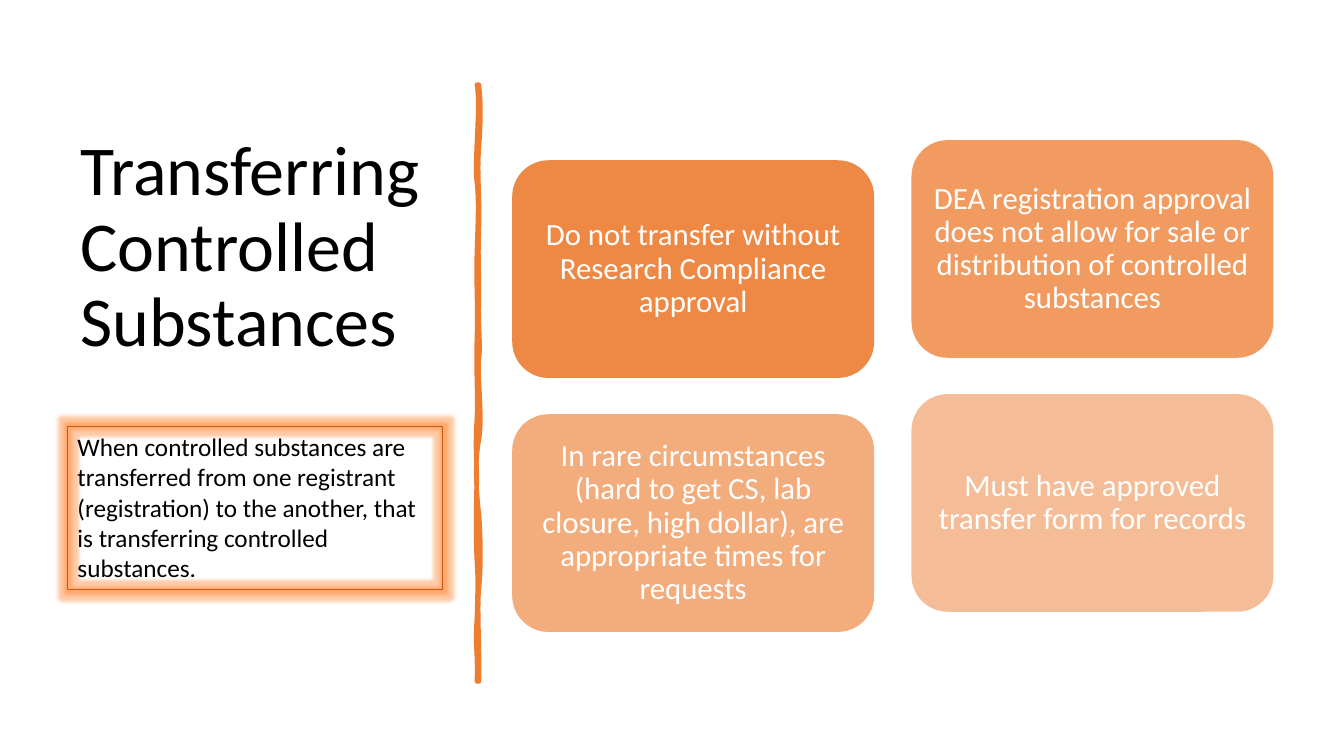
from dataclasses import dataclass

from lxml.etree import SubElement
from pptx import Presentation
from pptx.dml.color import RGBColor
from pptx.enum.shapes import MSO_SHAPE as Shape
from pptx.enum.text import MSO_ANCHOR as Anchor, PP_ALIGN as Align
from pptx.oxml.ns import qn
from pptx.util import Inches, Pt


@dataclass(frozen=True)
class Theme:
    font: str = "Calibri"
    accent: str = "ED7D31"
    border: str = "C55A11"
    glow: str = "FF7A20"
    dark: str = "000000"
    light: str = "FFFFFF"
    title_size: float = 50
    card_size: float = 22
    note_size: float = 18


THEME = Theme()

CARDS = [
    ("Do not transfer without Research Compliance approval", 90),
    ("DEA registration approval does not allow for sale or distribution "
     "of controlled substances", 77),
    ("In rare circumstances (hard to get CS, lab closure, high dollar), "
     "are appropriate times for requests", 63),
    ("Must have approved transfer form for records", 50),
]

# Hand-drawn divider: start point, then curves (two controls and an end)
DIVIDER_START = (4.75, 0.84)
DIVIDER_CURVES = [
    ((4.77, 1.02), (4.77, 1.19), (4.75, 1.46)),
    ((4.73, 1.73), (4.76, 1.95), (4.75, 2.26)),
    ((4.74, 2.57), (4.75, 2.62), (4.75, 2.94)),
    ((4.74, 3.25), (4.77, 3.42), (4.75, 3.56)),
    ((4.73, 3.7), (4.79, 4.14), (4.75, 4.36)),
    ((4.71, 4.57), (4.72, 4.84), (4.75, 5.1)),
    ((4.77, 5.36), (4.77, 5.64), (4.75, 5.84)),
    ((4.73, 6.03), (4.76, 6.5), (4.75, 6.76)),
    ((4.74, 6.76), (4.73, 6.76), (4.73, 6.76)),
    ((4.74, 6.46), (4.71, 6.44), (4.73, 6.13)),
    ((4.74, 5.83), (4.74, 5.7), (4.73, 5.57)),
    ((4.72, 5.44), (4.72, 4.95), (4.73, 4.77)),
    ((4.73, 4.59), (4.71, 4.45), (4.73, 4.15)),
    ((4.74, 3.86), (4.72, 3.73), (4.73, 3.35)),
    ((4.74, 2.98), (4.72, 2.81), (4.73, 2.5)),
    ((4.74, 2.18), (4.75, 2), (4.73, 1.81)),
    ((4.7, 1.63), (4.77, 1.04), (4.73, 0.84)),
]


def color(name):
    return RGBColor.from_string(name)


def write(shape, text, size, ink, align=Align.LEFT, anchor=Anchor.MIDDLE,
          spacing=1.0):
    frame = shape.text_frame
    frame.word_wrap = True
    frame.vertical_anchor = anchor
    para = frame.paragraphs[0]
    para.alignment = align
    para.line_spacing = spacing
    span = para.add_run()
    span.text = text
    span.font.name = THEME.font
    span.font.size = Pt(size)
    span.font.color.rgb = color(ink)


def set_alpha(color_element, percent):
    SubElement(color_element, qn("a:alpha")).set("val", str(percent * 1000))


def add_glow(shape, radius, ink, percent):
    effects = shape._element.spPr.find(qn("a:effectLst"))
    glow = SubElement(effects, qn("a:glow"), rad=str(radius))
    set_alpha(SubElement(glow, qn("a:srgbClr"), val=ink), percent)


def add_title(page, text):
    box = page.shapes.add_textbox(Inches(0.7), Inches(0.7),
                                  Inches(3.74), Inches(3.53))
    write(box, text, THEME.title_size, THEME.dark, spacing=0.9)


def add_note(page, text):
    box = page.shapes.add_shape(Shape.RECTANGLE, Inches(0.67), Inches(4.23),
                                Inches(3.72), Inches(1.62))
    box.shadow.inherit = False
    box.fill.background()
    box.line.color.rgb = color(THEME.border)
    box.line.width = Pt(0.75)
    add_glow(box, Pt(5), THEME.glow, 40)
    write(box, text, THEME.note_size, THEME.dark, anchor=Anchor.TOP)


def bend_segments(shape, curves):
    """Turn the straight segments of a freeform into cubic Bézier curves."""
    segments = list(shape._element.spPr.iter(qn("a:lnTo")))
    for segment, points in zip(segments, curves):
        segment.tag = qn("a:cubicBezTo")
        segment.clear()
        for x, y in points:
            SubElement(segment, qn("a:pt"), x=str(Inches(x) - shape.left),
                       y=str(Inches(y) - shape.top))


def add_divider(page):
    x, y = DIVIDER_START
    builder = page.shapes.build_freeform(Inches(x), Inches(y))
    ends = [(Inches(x), Inches(y)) for *_, (x, y) in DIVIDER_CURVES]
    builder.add_line_segments(ends, close=True)
    divider = builder.convert_to_shape()
    bend_segments(divider, DIVIDER_CURVES)
    divider.shadow.inherit = False
    divider.fill.solid()
    divider.fill.fore_color.rgb = color(THEME.accent)
    divider.line.color.rgb = color(THEME.accent)
    divider.line.width = Pt(3.25)


def add_card(page, left, top, text, opacity):
    card = page.shapes.add_shape(Shape.ROUNDED_RECTANGLE, Inches(left),
                                 Inches(top), Inches(3.59), Inches(2.16))
    card.shadow.inherit = False
    card.fill.solid()
    card.fill.fore_color.rgb = color(THEME.accent)
    set_alpha(card._element.spPr.find(f".//{qn('a:srgbClr')}"), opacity)
    card.line.fill.background()
    frame = card.text_frame
    frame.margin_left = frame.margin_right = Inches(0.09)
    frame.margin_top = frame.margin_bottom = Inches(0.09)
    write(card, text, THEME.card_size, THEME.light, Align.CENTER, spacing=0.9)


def main():
    deck = Presentation()
    deck.slide_width, deck.slide_height = Inches(13.33), Inches(7.5)
    page = deck.slides.add_slide(deck.slide_layouts[6])
    add_title(page, "Transferring Controlled Substances")
    add_divider(page)
    for index, (text, opacity) in enumerate(CARDS):
        row, column = divmod(index, 2)
        # The right column sits a little higher than the left one
        add_card(page, 5.08 + 3.96 * column, 1.59 + 2.52 * row - 0.2 * column,
                 text, opacity)
    add_note(page, "When controlled substances are transferred from one "
                   "registrant (registration) to the another, that is "
                   "transferring controlled substances.")
    deck.save("out.pptx")


if __name__ == "__main__":
    main()
